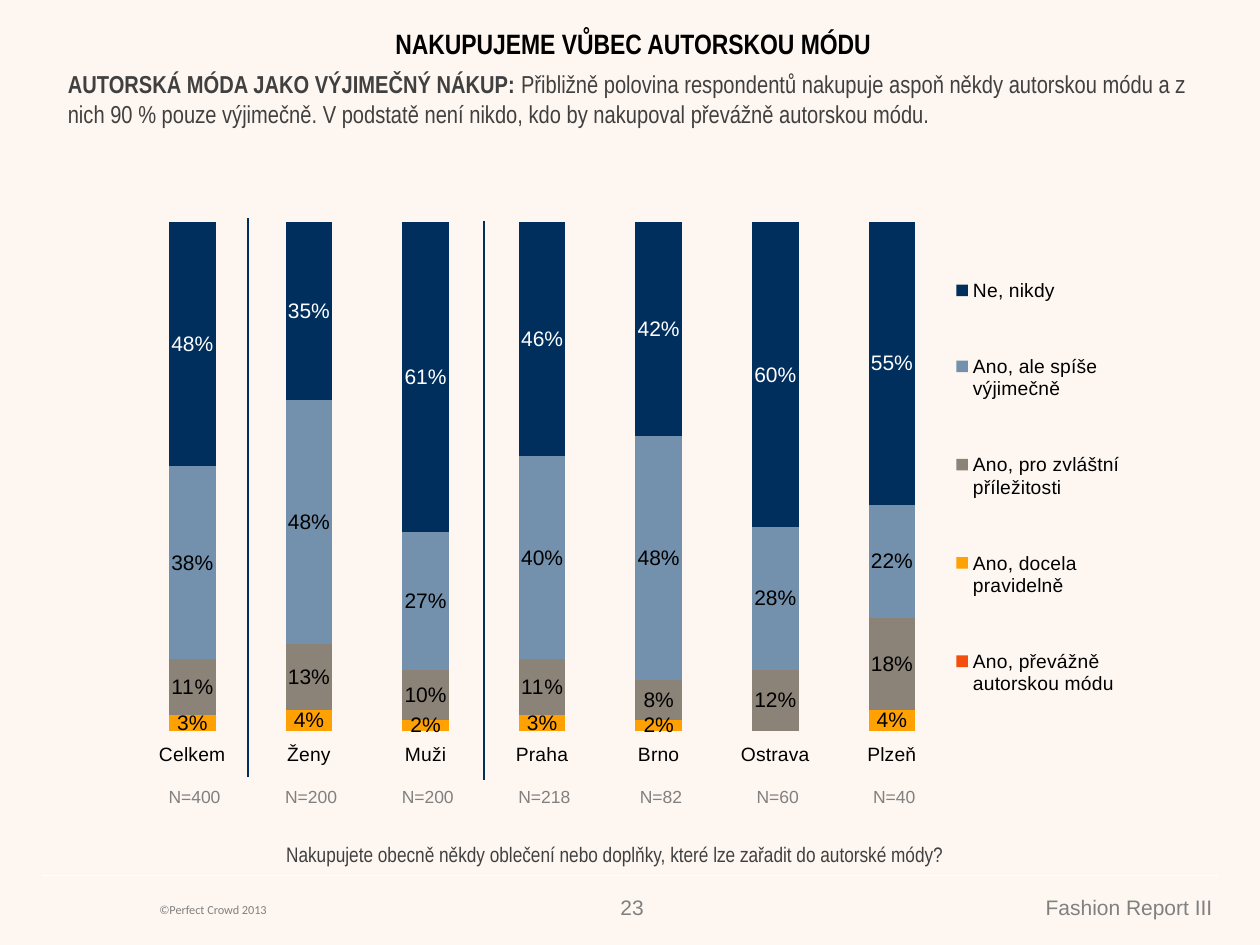
"""Builds the slide on how often respondents buy designer fashion."""
from lxml import etree
from pptx import Presentation
from pptx.chart.data import CategoryChartData
from pptx.dml.color import RGBColor
from pptx.enum import chart as ch, shapes, text
from pptx.oxml import ns
from pptx.util import Pt

COLORS = {
    "background": "FEF6F0", "black": "000000", "white": "FFFFFF",
    "body": "404040", "muted": "808080", "navy": "002F5E",
    "blue": "7391AD", "taupe": "8B8278", "amber": "FFA102", "red": "F34E0D",
}
CITIES = ["Celkem", "Ženy", "Muži", "Praha", "Brno", "Ostrava", "Plzeň"]
SAMPLES = [400, 200, 200, 218, 82, 60, 40]
SERIES = [
    ("Ano, převážně autorskou módu", [0] * 7, "red", None),
    ("Ano, docela pravidelně", [3, 4, 2, 3, 2, 0, 4], "amber", "black"),
    ("Ano, pro zvláštní příležitosti", [11, 13, 10, 11, 8, 12, 18], "taupe", "black"),
    ("Ano, ale spíše výjimečně", [38, 48, 27, 40, 48, 28, 22], "blue", "black"),
    ("Ne, nikdy", [48, 35, 61, 46, 42, 60, 55], "navy", "white"),
]
LEFT, CENTER, RIGHT = text.PP_ALIGN.LEFT, text.PP_ALIGN.CENTER, text.PP_ALIGN.RIGHT


def rgb(name):
    return RGBColor.from_string(COLORS[name])


def style(font, size, color, name="Arial", bold=False):
    font.size, font.name, font.bold = Pt(size), name, bold
    font.color.rgb = rgb(color)


def place(shape, box):
    shape.left, shape.top, shape.width, shape.height = map(Pt, box)


def fill_text(tf, runs, size, color, name="Arial", align=LEFT):
    tf.word_wrap = True
    p = tf.paragraphs[0]
    p.alignment = align
    for content, bold in runs:
        r = p.add_run()
        r.text = content
        style(r.font, size, color, name, bold)


def add_text(s, box, runs, size, color, name="Arial", align=LEFT):
    sp = s.shapes.add_textbox(*map(Pt, box))
    fill_text(sp.text_frame, runs, size, color, name, align)


def add_title(s, box, content):
    sp = s.shapes.title
    place(sp, box)
    sp.text_frame.vertical_anchor = text.MSO_ANCHOR.MIDDLE
    fill_text(sp.text_frame, [(content, True)], 16, "black", "Arial Narrow", CENTER)


def add_line(s, x1, y1, x2, y2, color):
    line = s.shapes.add_connector(shapes.MSO_CONNECTOR.STRAIGHT, *map(Pt, (x1, y1, x2, y2)))
    line.line.color.rgb = rgb(color)
    line.line.width = Pt(0.75)
    etree.SubElement(line._element.spPr, ns.qn("a:effectLst"))


def set_layout(parent, index, box, inner=False):
    for old in parent.findall(ns.qn("c:layout")):
        parent.remove(old)
    layout = etree.Element(ns.qn("c:layout"))
    manual = etree.SubElement(layout, ns.qn("c:manualLayout"))
    values = [("layoutTarget", "inner")] if inner else []
    values += [("xMode", "edge"), ("yMode", "edge"), *zip("xywh", map(str, box))]
    for tag, value in values:
        etree.SubElement(manual, ns.qn(f"c:{tag}")).set("val", value)
    parent.insert(index, layout)


def format_axes(chart):
    axis = chart.category_axis
    axis.tick_label_position = ch.XL_TICK_LABEL_POSITION.LOW
    axis.major_tick_mark = ch.XL_TICK_MARK.OUTSIDE
    axis.format.line.fill.background()
    style(axis.tick_labels.font, 11, "black")
    chart.value_axis.visible = False
    chart.value_axis.has_major_gridlines = False


def add_labels(series, color):
    labels = series.data_labels
    labels.show_value = True
    labels.position = ch.XL_LABEL_POSITION.CENTER
    labels.number_format = '#,##0"%";;'
    labels.number_format_is_linked = False
    style(labels.font, 12, color)


def add_share_chart(s, box):
    data = CategoryChartData(number_format="0")
    data.categories = CITIES
    for name, values, _, _ in SERIES:
        data.add_series(name, values)
    kind = ch.XL_CHART_TYPE.COLUMN_STACKED_100
    chart = s.shapes.add_chart(kind, *map(Pt, box), data).chart
    chart.has_title = False
    style(chart.font, 12, "black")
    format_axes(chart)
    plot = chart.plots[0]
    plot.gap_width, plot.overlap, plot.vary_by_categories = 150, 100, False
    for series, (_, _, color, label_color) in zip(plot.series, SERIES):
        series.format.fill.solid()
        series.format.fill.fore_color.rgb = rgb(color)
        if label_color:
            add_labels(series, label_color)
    chart.has_legend = True
    chart.legend.position = ch.XL_LEGEND_POSITION.RIGHT
    chart.legend.include_in_layout = False
    style(chart.legend.font, 11, "black")
    set_layout(chart._chartSpace.chart.plotArea, 0, (0.02, 0.055, 0.79, 0.807), True)
    set_layout(chart.legend._element, 1, (0.805, 0.06, 0.18, 0.83))


def add_sample_table(s, box):
    table = s.shapes.add_table(1, len(SAMPLES), *map(Pt, box)).table
    table.first_row = table.horz_banding = False
    style_id = table._tbl.tblPr.find(ns.qn("a:tableStyleId"))
    style_id.text = "{2D5ABB26-0587-4C30-8999-92F81FD0307C}"
    for cell, size in zip(table.rows[0].cells, SAMPLES):
        cell.fill.background()
        cell.margin_left = cell.margin_right = cell.margin_top = Pt(0.7)
        cell.margin_bottom = 0
        cell.vertical_anchor = text.MSO_ANCHOR.MIDDLE
        fill_text(cell.text_frame, [(f"N={size}", False)], 10, "muted", align=CENTER)


def add_footer(s):
    add_line(s, 24, 500.4, 696, 500.4, "white")
    add_text(s, (84, 512, 210, 16), [("©Perfect Crowd 2013", False)], 7, "muted", "Calibri")
    add_text(s, (345, 507.6, 30, 22), [("23", False)], 12, "muted", align=RIGHT)
    add_text(s, (433, 507.6, 267, 22), [("Fashion Report III", False)], 12, "muted", align=RIGHT)


def main():
    prs = Presentation()
    prs.slide_width, prs.slide_height = Pt(720), Pt(540)
    s = prs.slides.add_slide(prs.slide_layouts[5])
    s.background.fill.solid()
    s.background.fill.fore_color.rgb = rgb("background")
    add_footer(s)
    add_share_chart(s, (64.8, 107.3, 590.4, 360))
    add_line(s, 141.8, 124.6, 141.8, 444.2, "navy")
    add_line(s, 276.5, 126, 276.5, 445.7, "navy")
    add_title(s, (40.3, 11.5, 643, 26.6), "NAKUPUJEME VŮBEC AUTORSKOU MÓDU")
    add_text(s, (25.2, 477.4, 652.3, 22), [
        ("Nakupujete obecně někdy oblečení nebo doplňky, které lze zařadit do autorské módy?", False),
    ], 12, "body", "Arial Narrow", CENTER)
    add_sample_table(s, (77.8, 447.8, 466.6, 15.1))
    add_text(s, (31.7, 36, 673.9, 64), [
        ("AUTORSKÁ MÓDA JAKO VÝJIMEČNÝ NÁKUP: ", True),
        ("Přibližně polovina respondentů nakupuje aspoň někdy autorskou módu a z nich 90 % "
         "pouze výjimečně. V podstatě není nikdo, kdo by nakupoval převážně autorskou módu.", False),
    ], 14, "body", "Arial Narrow")
    prs.save("out.pptx")


if __name__ == "__main__":
    main()
